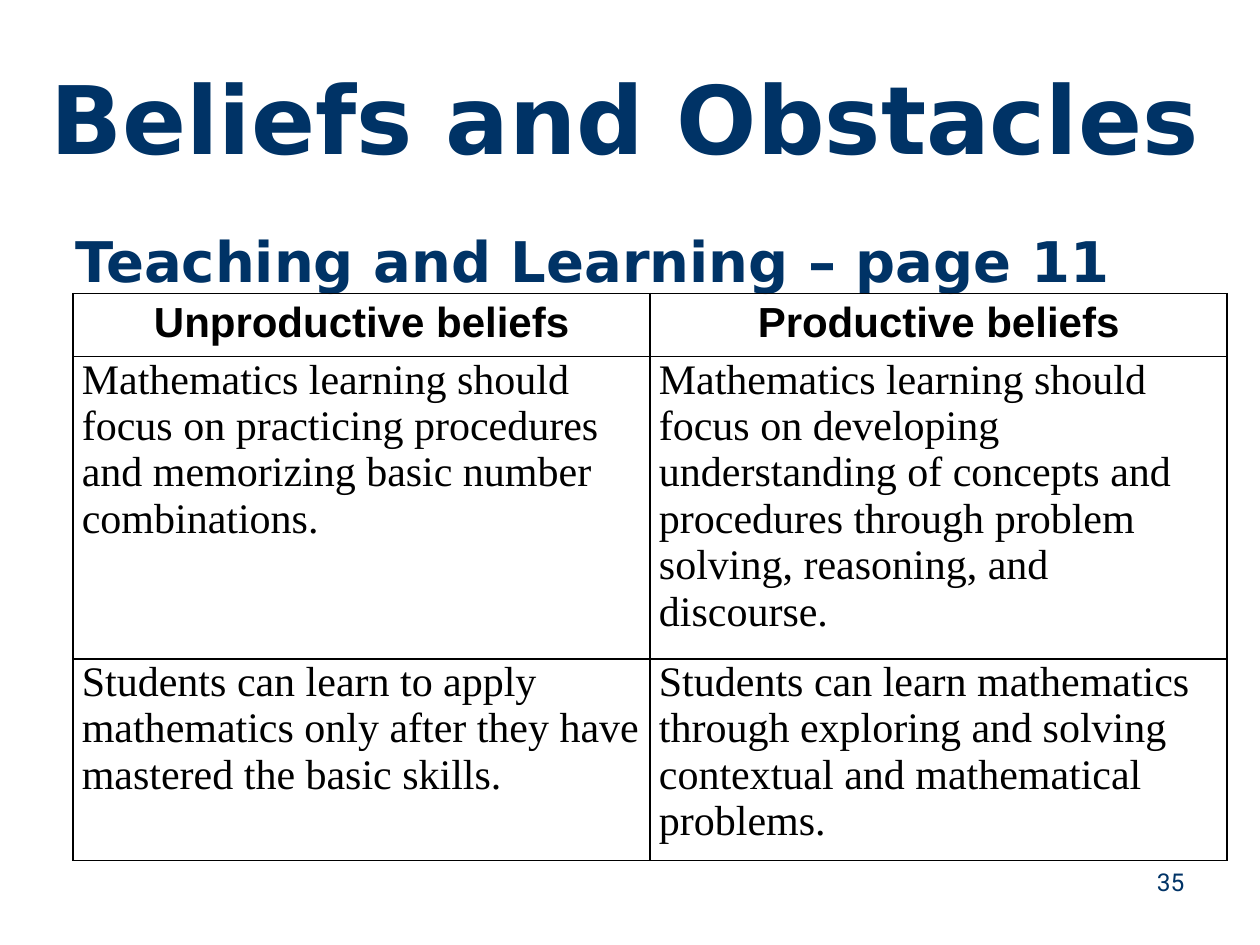
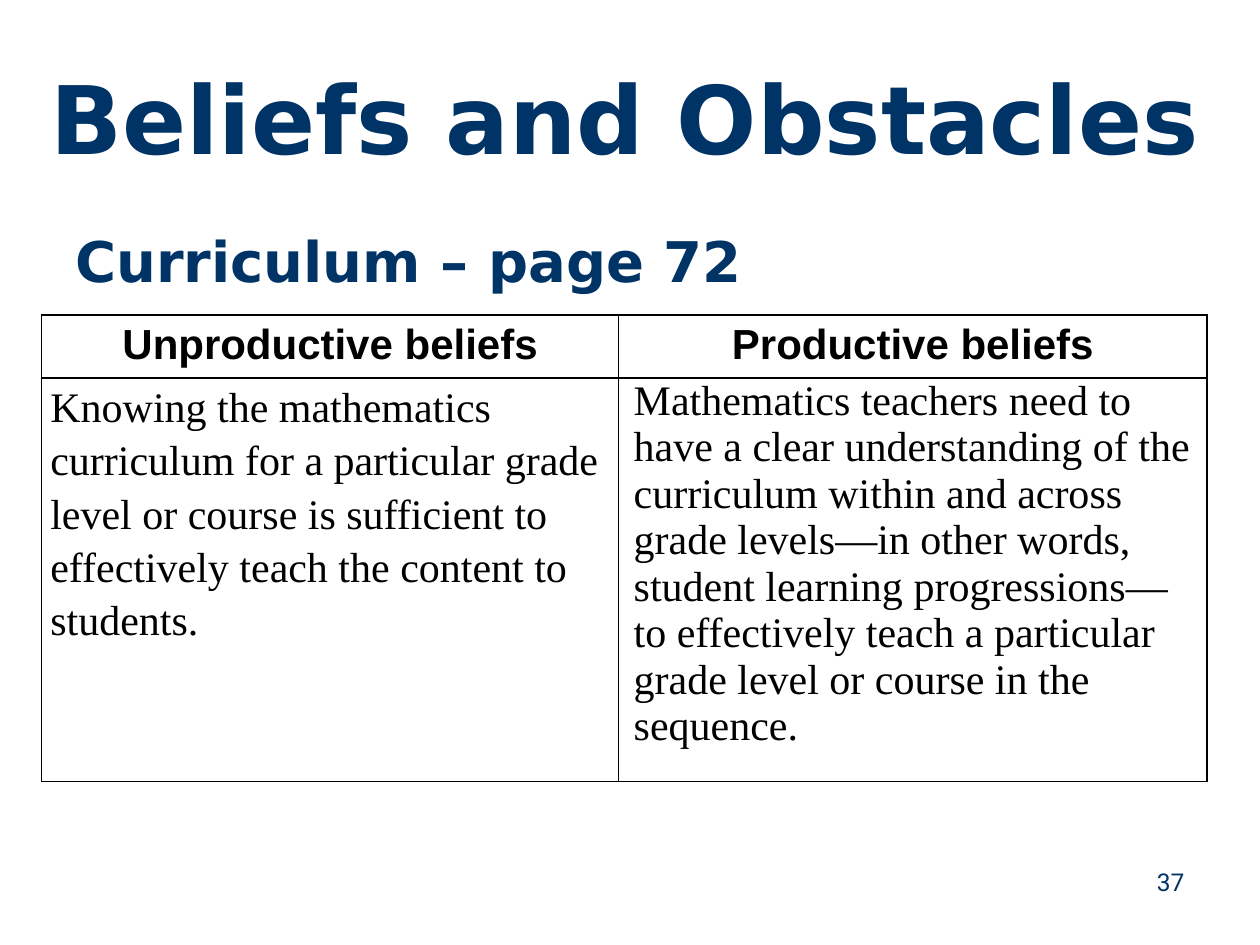
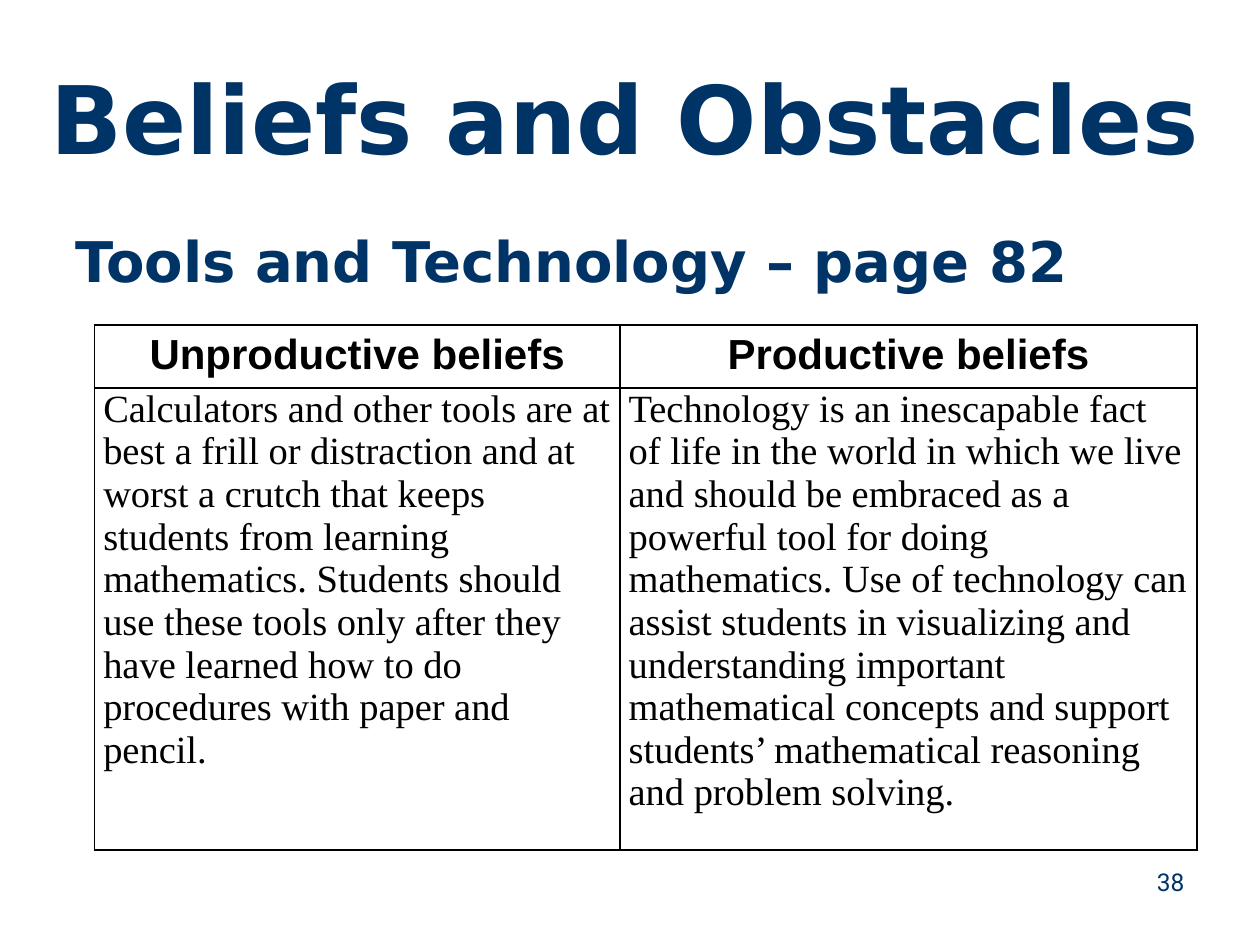
from dataclasses import dataclass

from lxml import etree
from pptx import Presentation
from pptx.dml.color import RGBColor
from pptx.enum.text import MSO_ANCHOR, PP_ALIGN
from pptx.oxml.ns import qn
from pptx.util import Inches, Pt

LEFT, CENTER, RIGHT = PP_ALIGN.LEFT, PP_ALIGN.CENTER, PP_ALIGN.RIGHT
TOP, MIDDLE = MSO_ANCHOR.TOP, MSO_ANCHOR.MIDDLE
BLANK = 6
TITLE = "Beliefs and Obstacles"
HEADINGS = ("Unproductive beliefs", "Productive beliefs")
HEADER_HEIGHT = 0.47
SIDE_MARGIN = 0.07


@dataclass(frozen=True)
class Theme:
    navy: RGBColor = RGBColor(0x00, 0x33, 0x66)
    black: RGBColor = RGBColor(0, 0, 0)
    border: str = "000000"
    border_width: int = Pt(1)
    display: str = "DejaVu Sans"
    number: str = "Roboto"
    heading: str = "Arial"
    body: str = "Times New Roman"
    title_size: int = 54
    subtitle_size: int = 32
    table_size: int = 24
    number_size: int = 14


class Deck:
    def __init__(self, theme):
        self.theme = theme
        self.prs = Presentation()
        self.prs.slide_width, self.prs.slide_height = Inches(10), Inches(7.5)
        self.slide = None

    def new_slide(self):
        self.slide = self.prs.slides.add_slide(self.prs.slide_layouts[BLANK])

    def paragraph(self, tf, text, align, color, font, line_spacing=None):
        """Fill a text frame with one formatted paragraph."""
        p = tf.paragraphs[0]
        p.alignment = align
        p.line_spacing = line_spacing
        r = p.add_run()
        r.text = text
        for name, value in font.items():
            setattr(r.font, name, value)
        r.font.color.rgb = color

    def text(self, text, box, align, anchor, font):
        tf = self.slide.shapes.add_textbox(*map(Inches, box)).text_frame
        tf.word_wrap = True
        tf.vertical_anchor = anchor
        self.paragraph(tf, text, align, self.theme.navy, font)

    def display_font(self, size):
        return {"name": self.theme.display, "size": Pt(size), "bold": True}

    def title(self, text):
        self.text(text, (0.17, 0.3, 9.58, 1.25), CENTER, MIDDLE,
                  self.display_font(self.theme.title_size))

    def subtitle(self, text):
        self.text(text, (0.5, 1.75, 9, 4.95), LEFT, TOP,
                  self.display_font(self.theme.subtitle_size))

    def page_number(self, number):
        t = self.theme
        self.text(str(number), (7.17, 6.83, 2.33, 0.52), RIGHT, TOP,
                  {"name": t.number, "size": Pt(t.number_size)})

    def border(self, cell):
        tcPr = cell._tc.get_or_add_tcPr()
        for side in ("lnL", "lnR", "lnT", "lnB"):
            ln = etree.SubElement(tcPr, qn(f"a:{side}"), w=str(self.theme.border_width))
            fill = etree.SubElement(ln, qn("a:solidFill"))
            etree.SubElement(fill, qn("a:srgbClr"), val=self.theme.border)

    def heading_cell(self, cell, text):
        t = self.theme
        self.paragraph(cell.text_frame, text, CENTER, t.black,
                       {"name": t.heading, "size": Pt(t.table_size), "bold": True})

    def belief_cell(self, cell, text, size, indent=0, line_spacing=None):
        t = self.theme
        margins = {"margin_left": SIDE_MARGIN + indent, "margin_right": SIDE_MARGIN,
                   "margin_top": 0, "margin_bottom": 0}
        for name, value in margins.items():
            setattr(cell, name, Inches(value))
        self.paragraph(cell.text_frame, text, LEFT, t.black,
                       {"name": t.body, "size": Pt(size), "bold": False}, line_spacing)

    def beliefs_table(self, left, top, widths, heights, beliefs, size=None,
                      column_formats=({}, {})):
        """Draw the headings and, below them, the rows of paired beliefs."""
        heights = (HEADER_HEIGHT, *heights)
        rows = (HEADINGS, *beliefs)
        table = self.slide.shapes.add_table(
            len(rows), len(widths), Inches(left), Inches(top),
            Inches(sum(widths)), Inches(sum(heights))).table
        table.first_row = table.horz_banding = False
        for column, width in zip(table.columns, widths):
            column.width = Inches(width)
        for i, (height, row) in enumerate(zip(heights, rows)):
            table.rows[i].height = Inches(height)
            for j, text in enumerate(row):
                cell = table.cell(i, j)
                self.border(cell)
                cell.fill.background()
                if i == 0:
                    self.heading_cell(cell, text)
                else:
                    self.belief_cell(cell, text, size or self.theme.table_size,
                                     **column_formats[j])


SLIDES = (
    {"subtitle": "Teaching and Learning – page 11", "number": 35,
     "table": {
         "left": 0.58, "top": 2.33, "widths": (4.58, 4.58), "heights": (2.21, 1.48),
         "beliefs": (
             ("Mathematics learning should focus on practicing procedures and "
              "memorizing basic number combinations.",
              "Mathematics learning should focus on developing understanding of "
              "concepts and procedures through problem solving, reasoning, and discourse."),
             ("Students can learn to apply mathematics only after they have "
              "mastered the basic skills.",
              "Students can learn mathematics through exploring and solving "
              "contextual and mathematical problems."))}},
    {"subtitle": "Curriculum – page 72", "number": 37,
     "table": {
         "left": 0.33, "top": 2.5, "widths": (4.58, 4.67), "heights": (2.95,),
         "beliefs": (
             ("Knowing the mathematics curriculum for a particular grade level or "
              "course is sufficient to effectively teach the content to students.",
              "Mathematics teachers need to have a clear understanding of the "
              "curriculum within and across grade levels—in other words, student "
              "learning progressions—to effectively teach a particular grade level "
              "or course in the sequence."),),
         "column_formats": ({"line_spacing": 1.15}, {"indent": 0.05})}},
    {"subtitle": "Tools and Technology – page 82", "number": 38,
     "table": {
         "left": 0.75, "top": 2.58, "widths": (4.17, 4.58), "heights": (3.38,),
         "size": 22,
         "beliefs": (
             ("Calculators and other tools are at best a frill or distraction and at "
              "worst a crutch that keeps students from learning mathematics. Students "
              "should use these tools only after they have learned how to do "
              "procedures with paper and pencil.",
              "Technology is an inescapable fact of life in the world in which we live "
              "and should be embraced as a powerful tool for doing mathematics. Use of "
              "technology can assist students in visualizing and understanding "
              "important mathematical concepts and support students’ mathematical "
              "reasoning and problem solving."),)}},
)


def main():
    deck = Deck(Theme())
    for content in SLIDES:
        deck.new_slide()
        deck.title(TITLE)
        deck.subtitle(content["subtitle"])
        deck.page_number(content["number"])
        deck.beliefs_table(**content["table"])
    deck.prs.save("out.pptx")


if __name__ == "__main__":
    main()
